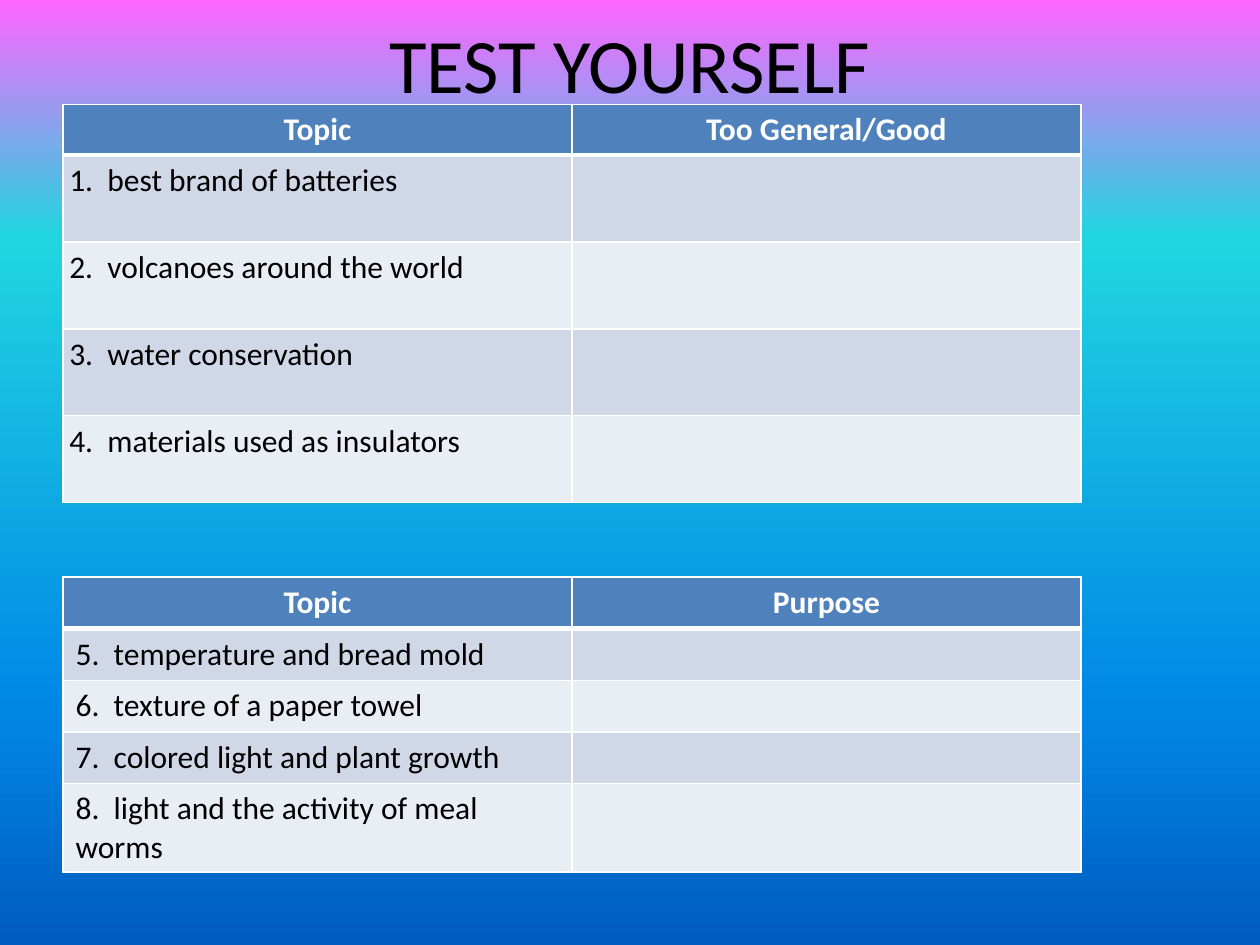
from pptx import Presentation
from pptx.dml.color import RGBColor as RGB
from pptx.enum.text import MSO_ANCHOR as ANCHOR, PP_ALIGN as ALIGN
from pptx.oxml.ns import qn
from pptx.util import Inches, Pt
from lxml import etree

COLORS = {"head": "4F81BD", "band": "D0D8E8", "plain": "E9EDF4",
          "white": "FFFFFF", "black": "000000"}
GRADIENT = [(0, "FF66FF"), (25, "21D6E0"), (75, "0087E6"), (100, "005CBF")]


def write(p, text, color, **fmt):
    r = p.add_run()
    r.text = text
    r.font.color.rgb = RGB.from_string(COLORS[color])
    for name, value in {"name": "Calibri", "size": Pt(18), "bold": False, **fmt}.items():
        setattr(r.font, name, value)


def border(cell, widths):
    tc_pr = cell._tc.get_or_add_tcPr()
    for i, (side, width) in enumerate(zip("LRTB", widths)):
        ln = etree.Element(qn(f"a:ln{side}"), w=str(Pt(width)))
        fill = etree.SubElement(ln, qn("a:solidFill"))
        etree.SubElement(fill, qn("a:srgbClr"), val=COLORS["white"])
        tc_pr.insert(i, ln)


prs = Presentation()
prs.slide_width, prs.slide_height = Inches(10), Inches(7.5)
s = prs.slides.add_slide(prs.slide_layouts[6])

# Background gradient, running from top to bottom
bg = s.background.fill
bg.gradient()
bg.gradient_angle = 270
stops = s._element.find(".//" + qn("a:gsLst"))
for gs in list(stops):
    stops.remove(gs)
for pos, color in GRADIENT:
    gs = etree.SubElement(stops, qn("a:gs"), pos=str(pos * 1000))
    etree.SubElement(gs, qn("a:srgbClr"), val=color)

# Title
tf = s.shapes.add_textbox(Inches(0.5), 0, Inches(9), Inches(1)).text_frame
tf.word_wrap = True
tf.vertical_anchor = ANCHOR.MIDDLE
tf.paragraphs[0].alignment = ALIGN.CENTER
write(tf.paragraphs[0], "TEST YOURSELF", "black", size=Pt(44))

# Question tables: top, header height, row height, side margin, headings, topics
TABLES = [
    (0.83, 0.4, 0.69, 0.05, ["Topic", "Too General/Good"],
     ["1.  best brand of batteries", "2.  volcanoes around the world",
      "3.  water conservation", "4.  materials used as insulators"]),
    (4.58, 0.41, 0.41, 0.1, ["Topic", "Purpose"],
     ["5.  temperature and bread mold", "6.  texture of a paper towel",
      "7.  colored light and plant growth",
      "8.  light and the activity of meal worms"]),
]
for top, head_h, row_h, margin, headings, topics in TABLES:
    rows = [headings] + [[topic, ""] for topic in topics]
    height = head_h + row_h * len(topics)
    table = s.shapes.add_table(len(rows), 2, Inches(0.5), Inches(top),
                               Inches(8.08), Inches(height)).table
    for i, row in enumerate(rows):
        table.rows[i].height = Inches(row_h if i else head_h)
        fill = "head" if i == 0 else "band" if i % 2 else "plain"
        for j, text in enumerate(row):
            cell = table.cell(i, j)
            cell.margin_left = cell.margin_right = Inches(margin)
            cell.margin_top = cell.margin_bottom = Inches(0.05)
            cell.fill.solid()
            cell.fill.fore_color.rgb = RGB.from_string(COLORS[fill])
            border(cell, (1, 1, 3 if i == 1 else 1, 3 if i == 0 else 1))
            p = cell.text_frame.paragraphs[0]
            if i == 0:
                p.alignment = ALIGN.CENTER
            if text:
                write(p, text, "black" if i else "white", bold=i == 0)

prs.save("out.pptx")
